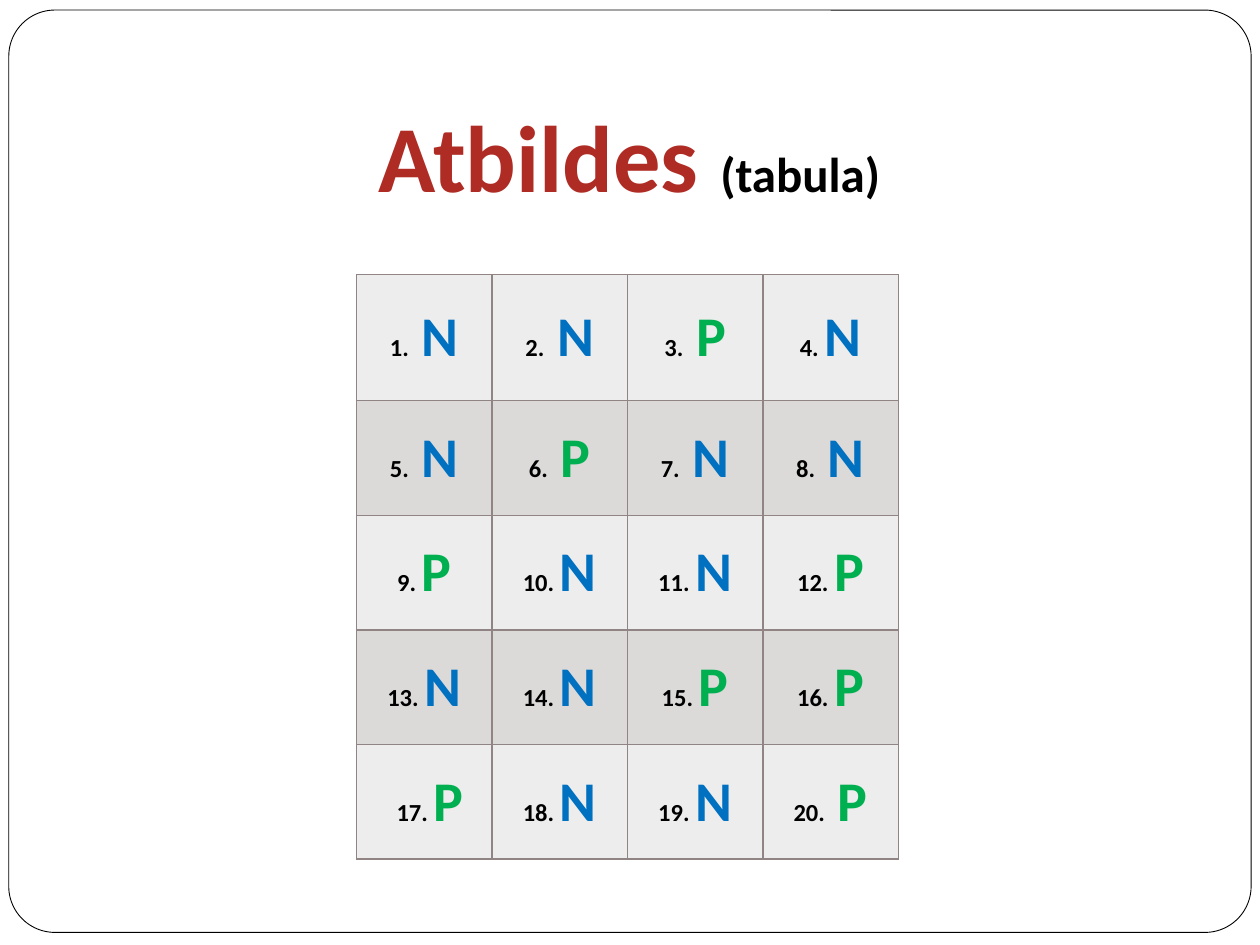
from lxml import etree
from pptx import Presentation
from pptx.dml.color import RGBColor
from pptx.enum.shapes import MSO_SHAPE
from pptx.enum.text import MSO_ANCHOR, PP_ALIGN
from pptx.oxml.ns import qn
from pptx.util import Inches, Pt

ROUNDED = MSO_SHAPE.ROUNDED_RECTANGLE
MIDDLE, BOTTOM = MSO_ANCHOR.MIDDLE, MSO_ANCHOR.BOTTOM
CENTER = PP_ALIGN.CENTER

FONT = "Calibri"
BLACK, WHITE, RED = "000000", "FFFFFF", "AF2C25"
BORDER = "918485"
BANDS = ("EEEDED", "DCD9D9")
LETTER_COLORS = {"N": "0070C0", "P": "00B050"}
ANSWERS = ("NNPN", "NPNN", "PNNP", "NNPP", "PNNP")
WIDE_GAPS = {1, 2, 3, 5, 6, 7, 8, 20}
SHIFTED = {17}


def color(value):
    return RGBColor.from_string(value)


def write_line(frame, spans):
    para = frame.paragraphs[0]
    para.alignment = CENTER
    para.font.name = FONT
    para.font.bold = True
    for text, size, tint in spans:
        span = para.add_run()
        span.text = text
        span.font.size = Pt(size)
        span.font.color.rgb = color(tint)


def add_frame(page, left, top, width, height):
    frame = page.shapes.add_shape(ROUNDED, left, top, width, height)
    frame.adjustments[0] = 0.05
    frame.shadow.inherit = False
    frame.fill.solid()
    frame.fill.fore_color.rgb = color(WHITE)
    frame.line.color.rgb = color(BLACK)
    frame.line.width = Pt(0.5)


def add_title(page, left, top, width, height):
    box = page.shapes.add_textbox(left, top, width, height)
    box.fill.solid()
    box.fill.fore_color.rgb = color(WHITE)
    frame = box.text_frame
    frame.word_wrap = True
    frame.vertical_anchor = BOTTOM
    frame.margin_bottom = Inches(0.1)
    write_line(frame, [("Atbildes ", 54, RED), ("(tabula)", 28, BLACK)])


def set_borders(cell):
    properties = cell._tc.get_or_add_tcPr()
    for side in ("a:lnL", "a:lnR", "a:lnT", "a:lnB"):
        line = etree.SubElement(properties, qn(side), w=str(Pt(1)))
        fill = etree.SubElement(line, qn("a:solidFill"))
        etree.SubElement(fill, qn("a:srgbClr"), val=BORDER)


def fill_cell(cell, number, letter, band):
    set_borders(cell)
    cell.fill.solid()
    cell.fill.fore_color.rgb = color(band)
    cell.vertical_anchor = MIDDLE
    if number in SHIFTED:
        cell.margin_left = Inches(0.19)
    gap_size = 32 if number in WIDE_GAPS else 14
    write_line(cell.text_frame, [
        (f"{number}.", 14, BLACK),
        (" ", gap_size, BLACK),
        (letter, 32, LETTER_COLORS[letter]),
    ])


def add_answers(page, left, top, width, height):
    row_count, column_count = len(ANSWERS), len(ANSWERS[0])
    table = page.shapes.add_table(
        row_count, column_count, left, top, width, height).table
    table.first_row = False
    table.horz_banding = False
    for column in table.columns:
        column.width = width // column_count
    first_height = Inches(1)
    for index, row in enumerate(table.rows):
        row.height = (height - first_height) // (row_count - 1) if index else first_height
        for place, letter in enumerate(ANSWERS[index]):
            number = index * column_count + place + 1
            fill_cell(row.cells[place], number, letter, BANDS[index % 2])


def main():
    deck = Presentation()
    deck.slide_width, deck.slide_height = Inches(10), Inches(7.5)
    page = deck.slides.add_slide(deck.slide_layouts[6])
    regions = (
        (add_frame, (0.07, 0.08, 9.86, 7.32)),
        (add_answers, (2.83, 2.18, 4.3, 4.64)),
        (add_title, (0.15, 0.6, 9.69, 1.18)),
    )
    for build, bounds in regions:
        build(page, *map(Inches, bounds))
    deck.save("out.pptx")


if __name__ == "__main__":
    main()
